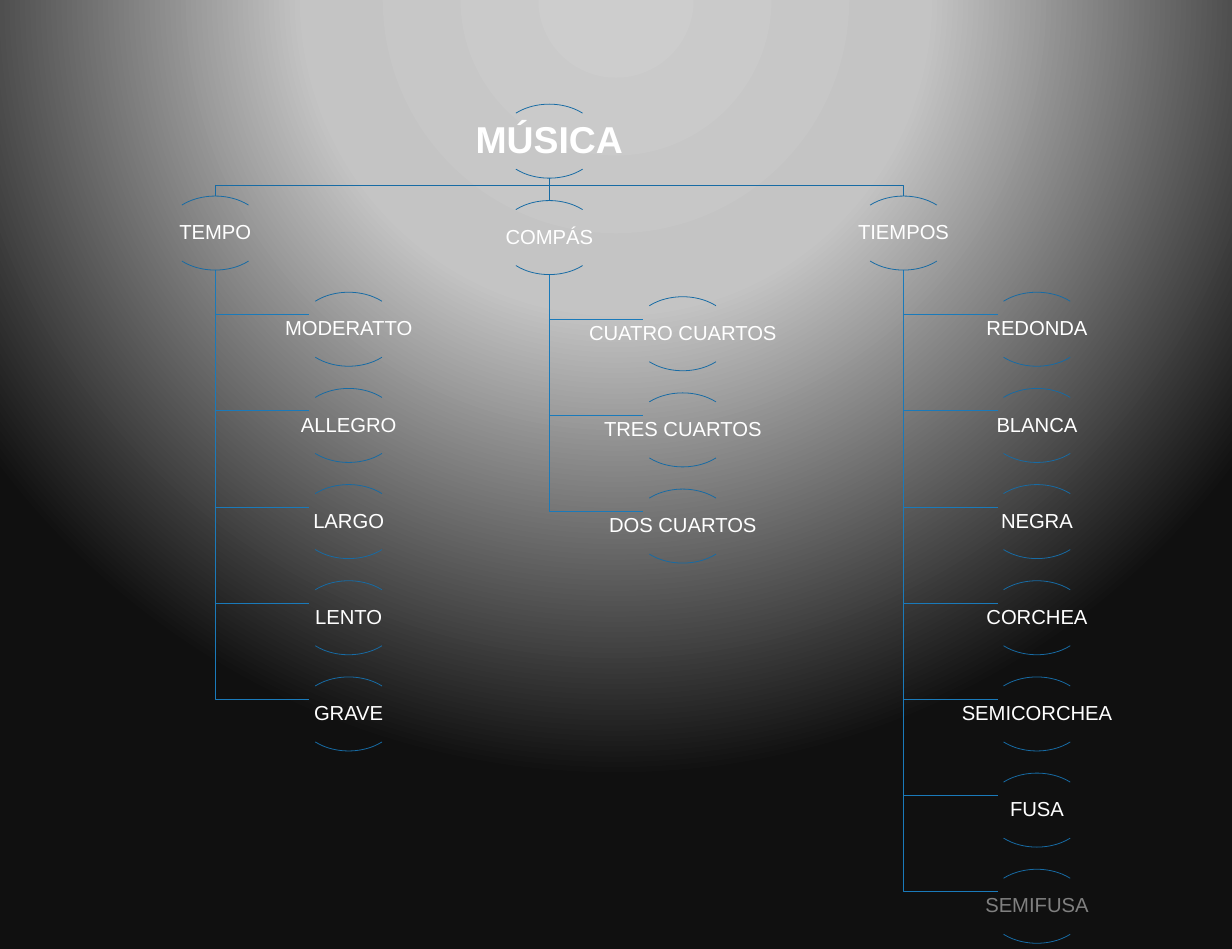
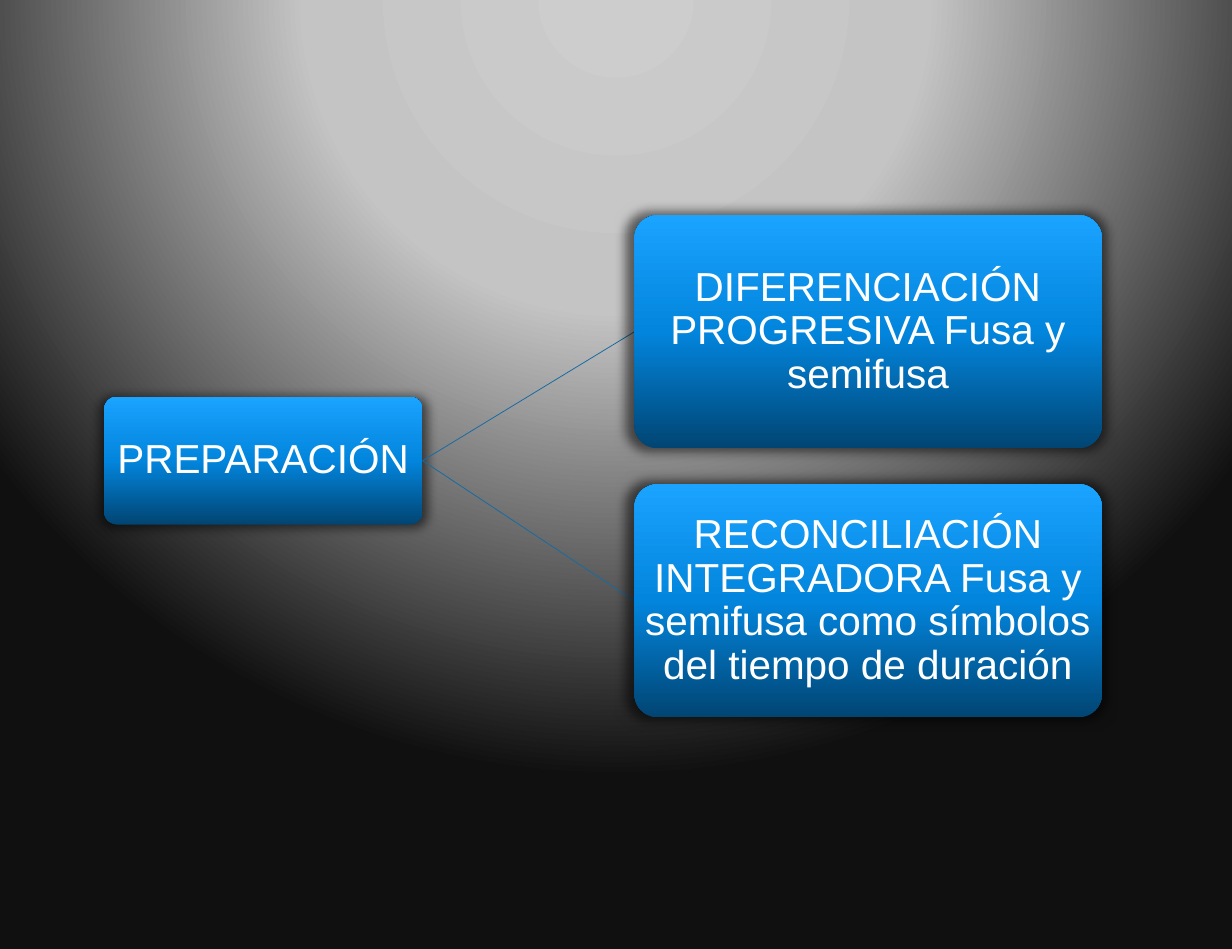
from lxml import etree
from pptx import Presentation
from pptx.dml.color import RGBColor
from pptx.enum import shapes, text
from pptx.oxml import ns
from pptx.util import Inches, Pt

COLORS = {
    "white": "FFFFFF", "muted": "808080", "black": "000000",
    "arc": "176BA4", "branch": "1A7ABA",
}
BACKGROUND_STOPS = [(0, "CDCDCD"), (40, "C4C4C4"), (100, "101010")]
CARD_STOPS = [(0, "014573"), (50, "0285DD"), (100, "1AA3FF")]

NODE_WIDTH, NODE_HEIGHT = 0.91, 0.66
LABEL_WIDTH, LABEL_HEIGHT = 1.83, 0.42
ROW_STEP = 1.3 * NODE_HEIGHT
CHILD_SHIFT = 1.19
BRANCH_LENGTH, BRANCH_DROP = 0.84, 0.2
ROOT_X, ROOT_TOP, BUS_Y = 4.9, 0.93, 1.65

COLUMNS = [
    ("TEMPO", 1.92, 1.75, ["MODERATTO", "ALLEGRO", "LARGO", "LENTO", "GRAVE"]),
    ("COMPÁS", ROOT_X, 1.79, ["CUATRO CUARTOS", "TRES CUARTOS", "DOS CUARTOS"]),
    ("TIEMPOS", 8.06, 1.75, ["REDONDA", "BLANCA", "NEGRA", "CORCHEA",
                             "SEMICORCHEA", "FUSA", "SEMIFUSA"]),
]
CARDS = [
    ("DIFERENCIACIÓN PROGRESIVA Fusa y semifusa", 1.92),
    ("RECONCILIACIÓN INTEGRADORA Fusa y semifusa como símbolos "
     "del tiempo de duración", 4.32),
]


def rgb(name):
    return RGBColor.from_string(COLORS[name])


def add_node(parent, tag, **values):
    node = etree.SubElement(parent, ns.qn(tag))
    for name, value in values.items():
        node.set(name, str(value))
    return node


def set_gradient(fill, owner, stops):
    """Give the fill its stops and return the gradient element."""
    fill.gradient()
    gradient = owner.find(".//" + ns.qn("a:gradFill"))
    for child in list(gradient):
        gradient.remove(child)
    stop_list = add_node(gradient, "a:gsLst")
    for position, color in stops:
        stop = add_node(stop_list, "a:gs", pos=position * 1000)
        add_node(stop, "a:srgbClr", val=color)
    return gradient


def set_background(master):
    gradient = set_gradient(master.background.fill, master.element, BACKGROUND_STOPS)
    circle = add_node(gradient, "a:path", path="circle")
    add_node(circle, "a:fillToRect", l=50000, t=-80000, r=50000, b=180000)


def style_line(line, color):
    line.color.rgb = rgb(color)
    line.width = Pt(0.5)


def write(shape, words, size, color="white", bold=False, inset=0.02):
    frame = shape.text_frame
    margins = {"margin_" + side: Inches(inset)
               for side in ("left", "top", "right", "bottom")}
    frame_format = {"word_wrap": True,
                    "vertical_anchor": text.MSO_ANCHOR.MIDDLE, **margins}
    for name, value in frame_format.items():
        setattr(frame, name, value)
    para = frame.paragraphs[0]
    para.alignment = text.PP_ALIGN.CENTER
    para.line_spacing = 0.9
    span = para.add_run()
    span.text = words
    for name, value in {"name": "Arial", "size": Pt(size), "bold": bold}.items():
        setattr(span.font, name, value)
    span.font.color.rgb = rgb(color)


def add_path(page, points, color):
    corners = [(Inches(x), Inches(y)) for x, y in points]
    builder = page.shapes.build_freeform(*corners[0])
    builder.add_line_segments(corners[1:], close=False)
    path_shape = builder.convert_to_shape()
    path_shape.shadow.inherit = False
    path_shape.fill.background()
    style_line(path_shape.line, color)


def add_line(page, start, end):
    line = page.shapes.add_connector(
        shapes.MSO_CONNECTOR.STRAIGHT, *[Inches(n) for n in (*start, *end)])
    style_line(line.line, "arc")
    add_node(line.element.spPr, "a:effectLst")
    return line


def add_term(page, words, center, top, size=13, **font):
    """A label between an upper and a lower arc."""
    for angles in ((132, 192), (24, 84)):
        arc = page.shapes.add_shape(
            shapes.MSO_SHAPE.ARC, Inches(center - NODE_WIDTH / 2), Inches(top),
            Inches(NODE_WIDTH), Inches(NODE_HEIGHT))
        arc.adjustments[0], arc.adjustments[1] = angles
        arc.shadow.inherit = False
        arc.fill.background()
        style_line(arc.line, "arc")
    label = page.shapes.add_textbox(
        Inches(center - LABEL_WIDTH / 2),
        Inches(top + (NODE_HEIGHT - LABEL_HEIGHT) / 2),
        Inches(LABEL_WIDTH), Inches(LABEL_HEIGHT))
    write(label, words, size, inset=0.01, **font)


def add_branches(page, center, top, count):
    """Lines from a heading to its terms, and from the root to the heading."""
    for row in range(count, 0, -1):
        branch_y = top + row * ROW_STEP + BRANCH_DROP
        add_path(page, [(center, top + NODE_HEIGHT), (center, branch_y),
                        (center + BRANCH_LENGTH, branch_y)], "branch")
    root_bottom = ROOT_TOP + NODE_HEIGHT
    if center == ROOT_X:
        add_line(page, (ROOT_X, root_bottom), (center, top))
    else:
        add_path(page, [(ROOT_X, root_bottom), (ROOT_X, BUS_Y),
                        (center, BUS_Y), (center, top)], "arc")


def add_column(page, heading, center, top, terms):
    add_term(page, heading, center, top)
    for row, term in enumerate(terms, 1):
        add_term(page, term, center + CHILD_SHIFT, top + row * ROW_STEP,
                 color="muted" if term == "SEMIFUSA" else "white")


def add_card(page, words, left, top, width, height):
    card = page.shapes.add_shape(
        shapes.MSO_SHAPE.ROUNDED_RECTANGLE,
        *[Inches(n) for n in (left, top, width, height)])
    card.adjustments[0] = 0.1
    card.line.fill.background()
    properties = card.element.spPr
    gradient = set_gradient(card.fill, properties, CARD_STOPS)
    add_node(gradient, "a:lin", ang=270 * 60000, scaled=0)
    card.shadow.inherit = False
    effects = properties.find(ns.qn("a:effectLst"))
    shadow = add_node(effects, "a:outerShdw", blurRad=Pt(7), dist=Pt(4),
                      dir=35 * 60000, sx=103000, sy=103000, algn="br",
                      rotWithShape=0)
    color = add_node(shadow, "a:srgbClr", val=COLORS["black"])
    add_node(color, "a:alpha", val=55000)
    write(card, words, 26)
    return card


def build_music_map(page):
    for _, center, top, terms in reversed(COLUMNS):
        add_branches(page, center, top, len(terms))
    add_term(page, "MÚSICA", ROOT_X, ROOT_TOP, size=24, bold=True)
    for column in COLUMNS:
        add_column(page, *column)


def build_preparation(page):
    left, top, width, height = 0.93, 3.54, 2.84, 1.14
    card_left, card_width, card_height = 5.66, 4.17, 2.08
    source = add_card(page, "PREPARACIÓN", left, top, width, height)
    for words, card_top in CARDS:
        line = add_line(page, (left + width, top + height / 2),
                        (card_left, card_top + card_height / 2))
        card = add_card(page, words, card_left, card_top, card_width, card_height)
        line.begin_connect(source, 3)
        line.end_connect(card, 1)


def main():
    deck = Presentation()
    deck.slide_width, deck.slide_height = Inches(10.99), Pt(609.6)
    set_background(deck.slide_master)
    for build in (build_music_map, build_preparation):
        build(deck.slides.add_slide(deck.slide_layouts[6]))
    deck.save("out.pptx")


if __name__ == "__main__":
    main()
